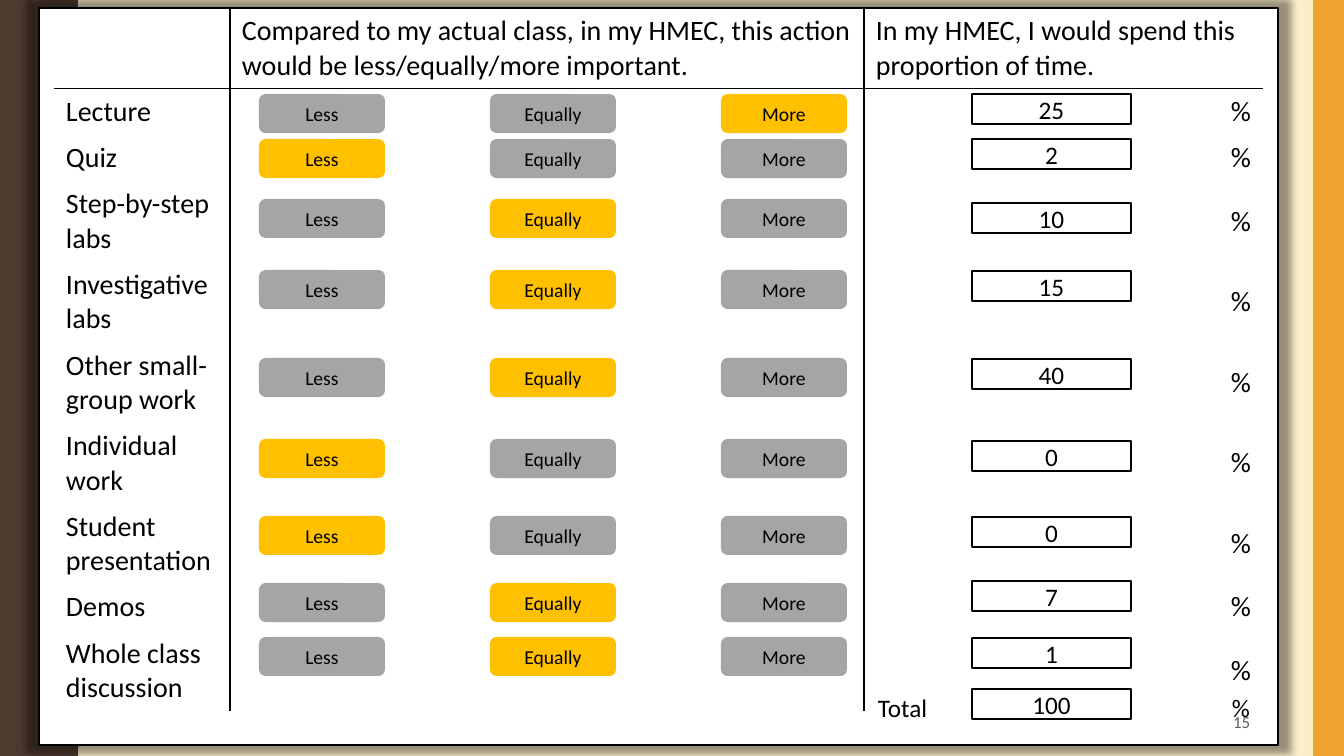
import math

import lxml.etree
import pptx
import pptx.dml.color
import pptx.enum.shapes
import pptx.enum.text
import pptx.oxml
import pptx.oxml.ns
import pptx.util

SCALE = 914400 / 100.8
FONT = "Calibri"
BLACK, WHITE, GRAY, GOLD = "000000", "FFFFFF", "A5A5A5", "FFC000"
LEFT, CENTER, RIGHT = (pptx.enum.text.PP_ALIGN.LEFT, pptx.enum.text.PP_ALIGN.CENTER,
                       pptx.enum.text.PP_ALIGN.RIGHT)
RECT = pptx.enum.shapes.MSO_SHAPE.RECTANGLE
ROUNDED = pptx.enum.shapes.MSO_SHAPE.ROUNDED_RECTANGLE
MIDDLE = pptx.enum.text.MSO_ANCHOR.MIDDLE
A = pptx.oxml.ns.nsdecls("a")


def write(frame, text, size, align, color=BLACK):
    """Put one formatted paragraph, vertically centred, into a text frame."""
    frame.vertical_anchor = MIDDLE
    frame.word_wrap = True
    paragraph = frame.paragraphs[0]
    paragraph.text = text
    paragraph.alignment = align
    paragraph.font.size = pptx.util.Pt(size)
    paragraph.font.name = FONT
    paragraph.font.color.rgb = pptx.dml.color.RGBColor.from_string(color)


def add_block(kind, box, fill, line=None, text="", size=18):
    """Add a filled shape at box (left, top, width, height in pixels)."""
    block = slide.shapes.add_shape(kind, *[round(v * SCALE) for v in box])
    block.shadow.inherit = False
    block.fill.solid()
    block.fill.fore_color.rgb = pptx.dml.color.RGBColor.from_string(fill)
    if line:
        block.line.color.rgb = pptx.dml.color.RGBColor.from_string(line)
        block.line.width = pptx.util.Pt(1)
    else:
        block.line.fill.background()
    if text:
        write(block.text_frame, text, size, CENTER)
    return block


deck = pptx.Presentation()
deck.slide_width, deck.slide_height = round(1344 * SCALE), round(756 * SCALE)
slide = deck.slides.add_slide(deck.slide_layouts[6])
slide.background.fill.solid()
slide.background.fill.fore_color.rgb = pptx.dml.color.RGBColor.from_string("FBEEC9")

# Side bands: the left one has five waves down its right edge
wave = [(round(88 - 10 * math.cos(2 * math.pi * step / 20)), round(step * 756 / 100))
        for step in range(101)]
outline = slide.shapes.build_freeform(0, 0, scale=SCALE)
outline.add_line_segments(wave + [(0, 756)], close=True)
wavy_band = outline.convert_to_shape()
wavy_band.shadow.inherit = False
wavy_band.fill.solid()
wavy_band.fill.fore_color.rgb = pptx.dml.color.RGBColor.from_string("4E3B30")
wavy_band.line.fill.background()
add_block(RECT, (1313, 0, 31, 756), "F0A22E")

# White panel with a soft shadow on all sides
panel = add_block(RECT, (39, 8, 1239, 737), WHITE, BLACK)
effects = panel._element.spPr.find(pptx.oxml.ns.qn("a:effectLst"))
effects.append(pptx.oxml.parse_xml(
    f'<a:outerShdw {A} blurRad="63500" sx="102000" sy="102000" algn="ctr" rotWithShape="0">'
    '<a:srgbClr val="000000"><a:alpha val="40000"/></a:srgbClr></a:outerShdw>'))

# Activity, row height, chosen rating, rating top, share of time, share top
activities = [
    ("Lecture", 46, "More", 94, 25, 94),
    ("Quiz", 46, "Less", 139, 2, 139),
    ("Step-by-step labs", 80, "Equally", 199, 10, 203),
    ("Investigative labs", 80, "Equally", 270, 15, 271),
    ("Other small-group work", 80, "Equally", 358, 40, 359),
    ("Individual work", 80, "Less", 439, 0, 441),
    ("Student presentation", 80, "Less", 516, 0, 517),
    ("Demos", 46, "Equally", 583, 7, 581),
    ("Whole class discussion", 80, "Equally", 637, 1, 638),
]
column_widths = [176, 143, 202, 127, 162, 399]
row_heights = [80] + [activity[1] for activity in activities]
survey = slide.shapes.add_table(
    len(row_heights), len(column_widths), *[round(v * SCALE) for v in (
        54, 8, sum(column_widths), sum(row_heights))]).table
survey.first_row = survey.horz_banding = False
for column, width in zip(survey.columns, column_widths):
    column.width = round(width * SCALE)
for row, height in zip(survey.rows, row_heights):
    row.height = round(height * SCALE)
survey.cell(0, 1).merge(survey.cell(0, 4))

wording = {
    (0, 1): "Compared to my actual class, in my HMEC, this action would be "
            "less/equally/more important.",
    (0, 5): "In my HMEC, I would spend this proportion of time.",
}
for r, activity in enumerate(activities, 1):
    wording[r, 0] = activity[0]
    wording[r, 5] = "%"

for r in range(len(row_heights)):
    for c in range(len(column_widths)):
        cell = survey.cell(r, c)
        cell.margin_left = cell.margin_right = round(12 * SCALE)
        cell.margin_top = cell.margin_bottom = round(6 * SCALE)
        cell.vertical_anchor = MIDDLE
        ruled = {"lnL": c in (1, 5), "lnR": c in (0, 4) or (r, c) == (0, 1),
                 "lnT": r == 1, "lnB": r == 0}
        for side, visible in ruled.items():
            paint = f'<a:solidFill><a:srgbClr val="{BLACK}"/></a:solidFill>'
            cell._tc.get_or_add_tcPr().append(pptx.oxml.parse_xml(
                f'<a:{side} {A} w="12700">{paint if visible else "<a:noFill/>"}</a:{side}>'))
        cell.fill.background()
        if (r, c) in wording:
            align = RIGHT if r and c == 5 else LEFT
            write(cell.text_frame, wording[r, c], 20, align)

# Shares of time, with their total
shares = [(share, top) for *_, share, top in activities]
for share, top in shares + [(sum(share for share, _ in shares), 689)]:
    add_block(RECT, (972, top, 159, 30), WHITE, BLACK, str(share))

total = slide.shapes.add_textbox(*[round(v * SCALE) for v in (868, 687, 396, 40)])
write(total.text_frame, "Total\t%", 18, LEFT)
tabs = lxml.etree.SubElement(total.text_frame.paragraphs[0]._p.get_or_add_pPr(),
                             pptx.oxml.ns.qn("a:tabLst"))
lxml.etree.SubElement(tabs, pptx.oxml.ns.qn("a:tab"), pos=str(round(372 * SCALE)), algn="r")
# The tab list has to come before the default run properties
tabs.getparent().insert(0, tabs)

# Rating buttons, the chosen one in gold
for i, rating in enumerate(("Less", "Equally", "More")):
    for _, _, chosen, top, _, _ in activities:
        add_block(ROUNDED, (259 + 231 * i, top, 126, 39),
                  GOLD if rating == chosen else GRAY, text=rating, size=14)

page_number = slide.shapes.add_textbox(*[round(v * SCALE) for v in (950, 703, 310, 38)])
write(page_number.text_frame, "15", 12, RIGHT, "595959")

deck.save("out.pptx")
